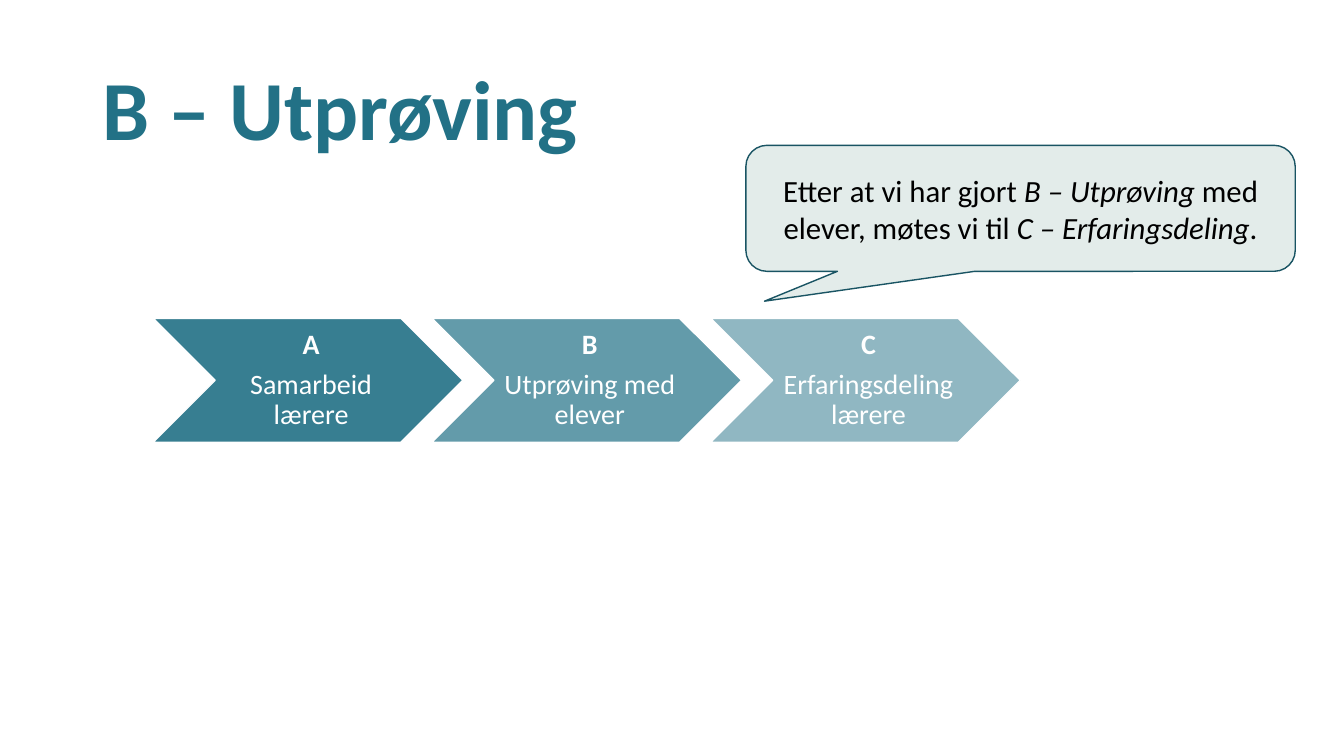
from dataclasses import dataclass
from typing import Any

from lxml.etree import SubElement
from pptx import Presentation
from pptx.dml.color import RGBColor
from pptx.enum.shapes import MSO_SHAPE as Geo
from pptx.enum.text import MSO_ANCHOR as Anchor, MSO_AUTO_SIZE as Fit, PP_ALIGN as Align
from pptx.oxml.ns import qn
from pptx.util import Emu, Inches, Pt

TEAL = RGBColor(0x22, 0x71, 0x86)
DEEP = RGBColor(0x19, 0x54, 0x63)
MIST = RGBColor(0xE3, 0xEC, 0xEA)
WHITE = RGBColor(0xFF, 0xFF, 0xFF)
BLACK = RGBColor(0x00, 0x00, 0x00)

WIDE, HIGH = Inches(13.33), Inches(7.5)
COLS, ROWS = 160, 90

FRAME = {"word_wrap": True, "auto_size": Fit.NONE, "vertical_anchor": Anchor.MIDDLE}
INSET = {"margin_left": Inches(0.09), "margin_right": Inches(0.03),
         "margin_top": Inches(0.03), "margin_bottom": Inches(0.03)}
HEAD = {"name": "Calibri", "size": Pt(60), "bold": True}
STEP = {"name": "Calibri", "size": Pt(20)}
NOTE = {"name": "Calibri", "size": Pt(22)}
CENTRE = {"alignment": Align.CENTER}
TIGHT = {"alignment": Align.CENTER, "line_spacing": 0.9, "space_after": Pt(7)}


@dataclass(frozen=True)
class Box:
    """A place in grid columns and rows."""
    col: float
    row: float
    wide: float
    high: float

    def place(self) -> tuple[Emu, Emu, Emu, Emu]:
        return (Emu(round(self.col * WIDE / COLS)), Emu(round(self.row * HIGH / ROWS)),
                Emu(round(self.wide * WIDE / COLS)), Emu(round(self.high * HIGH / ROWS)))


@dataclass(frozen=True)
class Stage:
    mark: str
    label: str
    alpha: int


TITLE = Box(11, 4.8, 138, 17.4)
CALL = Box(88.8, 17.3, 65.4, 15)
FIRST = Box(18.25, 37.9, 36.85, 14.75)
PITCH = 33.18

STAGES = [
    Stage("A", "Samarbeid lærere", 90),
    Stage("B", "Utprøving med elever", 70),
    Stage("C", "Erfaringsdeling lærere", 50),
]
REMARK = [
    ("Etter at vi har gjort ", False),
    ("B – Utprøving ", True),
    ("med elever, møtes vi til ", False),
    ("C – Erfaringsdeling", True),
    (".", False),
]


def apply(item: Any, vals: dict[str, Any]) -> None:
    for key, val in vals.items():
        setattr(item, key, val)


def write(para: Any, text: str, color: RGBColor, font: dict[str, Any]) -> None:
    run = para.add_run()
    run.text = text
    apply(run.font, font)
    run.font.color.rgb = color


def draw(shapes: Any, kind: Geo, box: Box, fill: RGBColor, line: RGBColor) -> Any:
    shape = shapes.add_shape(kind, *box.place())
    shape.shadow.inherit = False
    shape.fill.solid()
    shape.fill.fore_color.rgb = fill
    shape.line.color.rgb = line
    shape.line.width = Pt(1)
    return shape


def fade(shape: Any, alpha: int) -> None:
    """Set the opacity of the fill in percent."""
    color = shape.fill._xPr.find(qn("a:solidFill"))[0]
    SubElement(color, qn("a:alpha"), val=str(alpha * 1000))


def add_title(slide: Any) -> None:
    title = slide.shapes.title
    apply(title, dict(zip(("left", "top", "width", "height"), TITLE.place())))
    apply(title.text_frame, FRAME)
    para = title.text_frame.paragraphs[0]
    apply(para, {"alignment": Align.LEFT, "line_spacing": 0.9})
    write(para, "B – Utprøving", TEAL, HEAD)


def add_stage(shapes: Any, stage: Stage, box: Box) -> None:
    fade(draw(shapes, Geo.CHEVRON, box, TEAL, WHITE), stage.alpha)
    inner = Box(box.col + box.high / 2, box.row, box.wide - box.high, box.high)
    frame = shapes.add_textbox(*inner.place()).text_frame
    apply(frame, FRAME | INSET)
    paras = frame.paragraphs[0], frame.add_paragraph()
    for para, text, bold in zip(paras, (stage.mark, stage.label), (True, False)):
        apply(para, TIGHT)
        write(para, text, WHITE, STEP | {"bold": bold})


def add_call(slide: Any) -> None:
    call = draw(slide.shapes, Geo.ROUNDED_RECTANGULAR_CALLOUT, CALL, MIST, DEEP)
    for num, val in enumerate((-0.466, 0.737, 0.167)):
        call.adjustments[num] = val
    apply(call.text_frame, FRAME)
    para = call.text_frame.paragraphs[0]
    apply(para, CENTRE)
    for text, slant in REMARK:
        write(para, text, BLACK, NOTE | {"italic": slant})


def main() -> None:
    deck = Presentation()
    apply(deck, {"slide_width": WIDE, "slide_height": HIGH})
    slide = deck.slides.add_slide(deck.slide_layouts[5])
    add_title(slide)
    group = slide.shapes.add_group_shape()
    for num, stage in enumerate(STAGES):
        box = Box(FIRST.col + num * PITCH, FIRST.row, FIRST.wide, FIRST.high)
        add_stage(group.shapes, stage, box)
    add_call(slide)
    deck.save("out.pptx")


if __name__ == "__main__":
    main()
